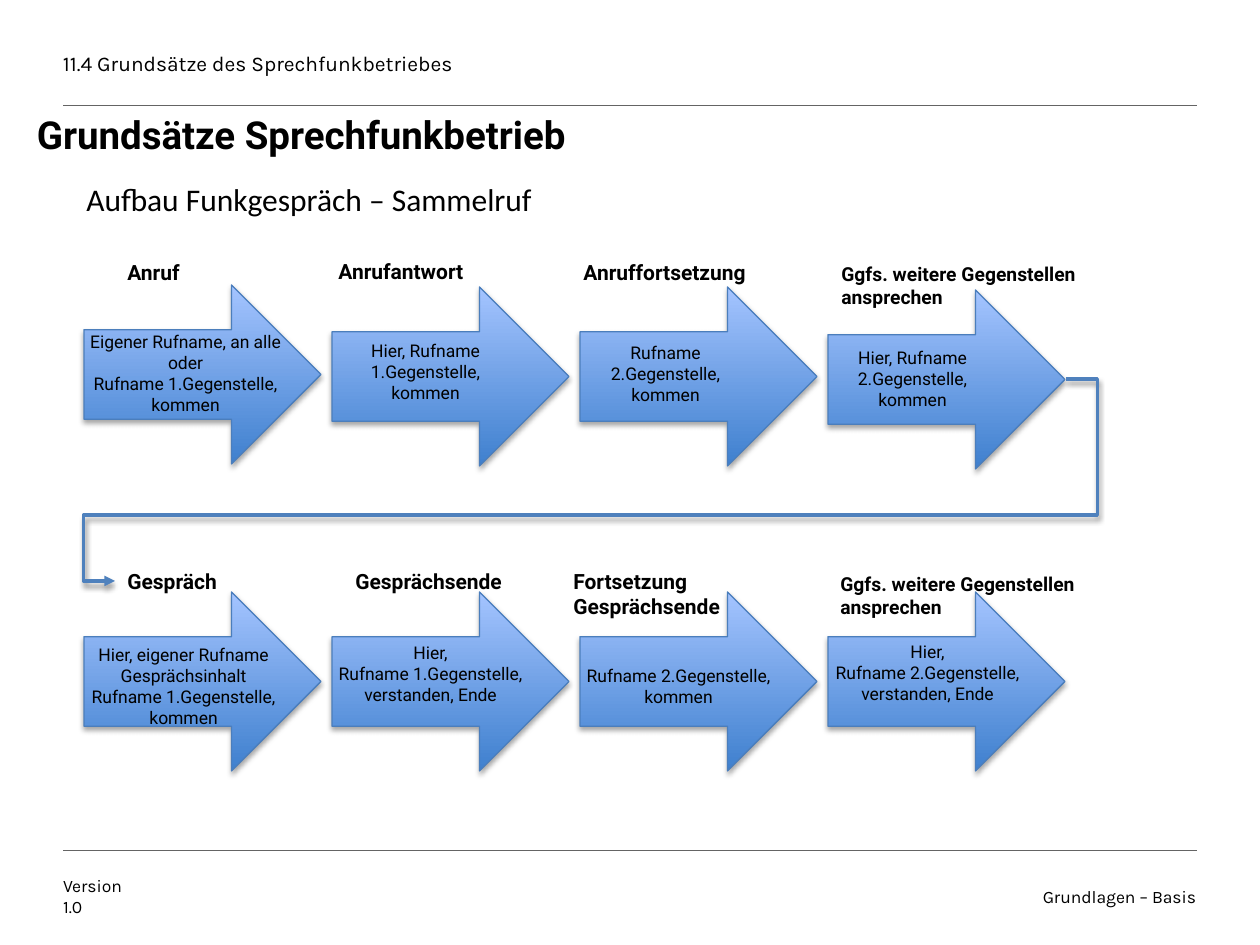
from dataclasses import dataclass

from lxml.etree import SubElement
from pptx import Presentation
from pptx.dml.color import RGBColor
from pptx.enum.shapes import MSO_CONNECTOR as Connector, MSO_SHAPE as Shape
from pptx.enum.text import MSO_ANCHOR as Anchor, MSO_AUTO_SIZE as AutoSize, PP_ALIGN as Align
from pptx.oxml.ns import qn
from pptx.util import Emu, Pt

BLACK = RGBColor(0x00, 0x00, 0x00)
RULE_GREY = RGBColor(0x64, 0x64, 0x64)
ARROW_BOTTOM = RGBColor(0x3F, 0x80, 0xCE)
ARROW_TOP = RGBColor(0xA4, 0xC4, 0xFF)
ARROW_EDGE = RGBColor(0x4B, 0x7E, 0xBC)
RETURN_BLUE = RGBColor(0x4F, 0x81, 0xBD)

PX_PER_INCH = 126
FIRST_ARROW_LEFT, ARROW_PITCH = 84, 248
ARROW_WIDTH, ARROW_HEIGHT = 237, 179
MESSAGE_WIDTH = 297


@dataclass(frozen=True)
class Style:
    font: str
    size: int
    bold: bool = False
    align: Align = Align.LEFT
    anchor: Anchor = Anchor.TOP
    framed: bool = True  # default insets, height follows the text
    line_spacing: int | None = None


@dataclass(frozen=True)
class Step:
    arrow_top: int
    caption: str
    caption_at: tuple[int, int]
    message: tuple[str, ...]
    message_at: tuple[int, int]
    wide_caption: bool = False


HEADER = Style("Karla", 12, anchor=Anchor.MIDDLE, framed=False)
FOOTER = Style("Karla", 10, anchor=Anchor.MIDDLE, framed=False)
FOOTER_RIGHT = Style("Karla", 10, align=Align.RIGHT, anchor=Anchor.MIDDLE, framed=False)
TITLE = Style("Roboto", 22, bold=True, framed=False, line_spacing=24)
SUBTITLE = Style("Calibri", 18)
CAPTION = Style("Roboto", 12, bold=True)
WIDE_CAPTION = Style("Roboto", 11, bold=True)
MESSAGE = Style("Roboto", 10, align=Align.CENTER)

FURTHER_STATIONS = "Ggfs. weitere Gegenstellen ansprechen"
ROWS = (
    (
        Step(285, "Anruf", (115, 253),
             ("Eigener Rufname, an alle", "oder", "Rufname 1.Gegenstelle,", "kommen"), (37, 325)),
        Step(287, "Anrufantwort", (326, 252),
             ("Hier, Rufname", "1.Gegenstelle,", "kommen"), (277, 334)),
        Step(287, "Anruffortsetzung", (571, 253),
             ("Rufname", "2.Gegenstelle,", "kommen"), (517, 336)),
        Step(290, FURTHER_STATIONS, (829, 256),
             ("Hier, Rufname", "2.Gegenstelle,", "kommen"), (764, 341), wide_caption=True),
    ),
    (
        Step(592, "Gespräch", (115, 562),
             ("Hier, eigener Rufname", "Gesprächsinhalt", "Rufname 1.Gegenstelle,", "kommen"),
             (35, 638)),
        Step(592, "Gesprächsende", (343, 562),
             ("Hier,", "Rufname 1.Gegenstelle,", "verstanden, Ende"), (282, 636)),
        Step(592, "Fortsetzung Gesprächsende", (561, 562),
             ("Rufname 2.Gegenstelle,", "kommen"), (530, 659)),
        Step(592, FURTHER_STATIONS, (828, 566),
             ("Hier,", "Rufname 2.Gegenstelle,", "verstanden, Ende"), (779, 635),
             wide_caption=True),
    ),
)


def px(length: int) -> Emu:
    return Emu(round(length * 914400 / PX_PER_INCH))


def add_text(slide, box: tuple[int, int, int, int], lines: tuple[str, ...], style: Style) -> None:
    frame = slide.shapes.add_textbox(*map(px, box)).text_frame
    frame.word_wrap = True
    frame.vertical_anchor = style.anchor
    if style.framed:
        frame.auto_size = AutoSize.SHAPE_TO_FIT_TEXT
    else:
        frame.margin_left = frame.margin_right = frame.margin_top = frame.margin_bottom = 0
    for index, line in enumerate(lines):
        paragraph = frame.add_paragraph() if index else frame.paragraphs[0]
        paragraph.alignment = style.align
        if style.line_spacing:
            paragraph.line_spacing = Pt(style.line_spacing)
        run = paragraph.add_run()
        run.text = line
        run.font.name = style.font
        run.font.size = Pt(style.size)
        run.font.bold = style.bold
        run.font.color.rgb = BLACK


def set_effects(shape, distance: int = 0, opacity: int = 0) -> None:
    """Replace the theme effect by a soft shadow below, or by none at zero opacity."""
    effects = SubElement(shape._element.spPr, qn("a:effectLst"))
    if opacity:
        shadow = SubElement(effects, qn("a:outerShdw"), blurRad="40000", dist=str(distance),
                            dir="5400000", rotWithShape="0")
        colour = SubElement(shadow, qn("a:srgbClr"), val=str(BLACK))
        SubElement(colour, qn("a:alpha"), val=str(opacity * 1000))


def add_rule(slide, top: int) -> None:
    rule = slide.shapes.add_connector(Connector.STRAIGHT, px(63), px(top), px(1197), px(top))
    rule.line.color.rgb = RULE_GREY
    rule.line.width = Pt(0.25)
    set_effects(rule)


def add_arrow(slide, left: int, top: int) -> None:
    arrow = slide.shapes.add_shape(Shape.RIGHT_ARROW, px(left), px(top),
                                   px(ARROW_WIDTH), px(ARROW_HEIGHT))
    arrow.fill.gradient()
    arrow.fill.gradient_angle = 90
    for stop, colour in zip(arrow.fill.gradient_stops, (ARROW_BOTTOM, ARROW_TOP)):
        stop.color.rgb = colour
    arrow.line.color.rgb = ARROW_EDGE
    arrow.line.width = Pt(0.75)
    set_effects(arrow, distance=23000, opacity=35)


def add_step_text(slide, step: Step) -> None:
    width, height, style = (291, 59, WIDE_CAPTION) if step.wide_caption else (238, 38, CAPTION)
    add_text(slide, (*step.caption_at, width, height), (step.caption,), style)
    message_height = 14 + 21 * len(step.message)
    add_text(slide, (*step.message_at, MESSAGE_WIDTH, message_height), step.message, MESSAGE)


def add_return_path(slide) -> None:
    """Lead from the end of the first row back to the start of the second."""
    path_line = slide.shapes.add_connector(Connector.ELBOW, px(1066), px(379), px(115), px(581))
    path_line.line.color.rgb = RETURN_BLUE
    path_line.line.width = Pt(2)
    SubElement(path_line.line._get_or_add_ln(), qn("a:tailEnd"), type="triangle")
    geometry = path_line._element.spPr.find(qn("a:prstGeom"))
    geometry.set("prst", "bentConnector5")
    guides = geometry.find(qn("a:avLst"))
    for number, value in enumerate((-3300, 67400, 103300), start=1):
        SubElement(guides, qn("a:gd"), name=f"adj{number}", fmla=f"val {value}")
    set_effects(path_line, distance=20000, opacity=38)


def main() -> None:
    deck = Presentation()
    deck.slide_width, deck.slide_height = px(1260), px(945)
    slide = deck.slides.add_slide(deck.slide_layouts[6])

    for top in (105, 850):
        add_rule(slide, top)
    add_text(slide, (63, 42, 766, 42), ("11.4 Grundsätze des Sprechfunkbetriebes",), HEADER)
    add_text(slide, (63, 868, 71, 56), ("Version", "1.0"), FOOTER)
    add_text(slide, (1017, 868, 179, 56), ("Grundlagen – Basis",), FOOTER_RIGHT)
    add_text(slide, (37, 115, 930, 84), ("Grundsätze Sprechfunkbetrieb",), TITLE)
    add_text(slide, (74, 174, 684, 50), ("Aufbau Funkgespräch – Sammelruf",), SUBTITLE)

    for row in ROWS:
        for column, step in enumerate(row):
            add_arrow(slide, FIRST_ARROW_LEFT + column * ARROW_PITCH, step.arrow_top)
    for row in ROWS:
        for step in row:
            add_step_text(slide, step)
    add_return_path(slide)

    deck.save("out.pptx")


if __name__ == "__main__":
    main()
